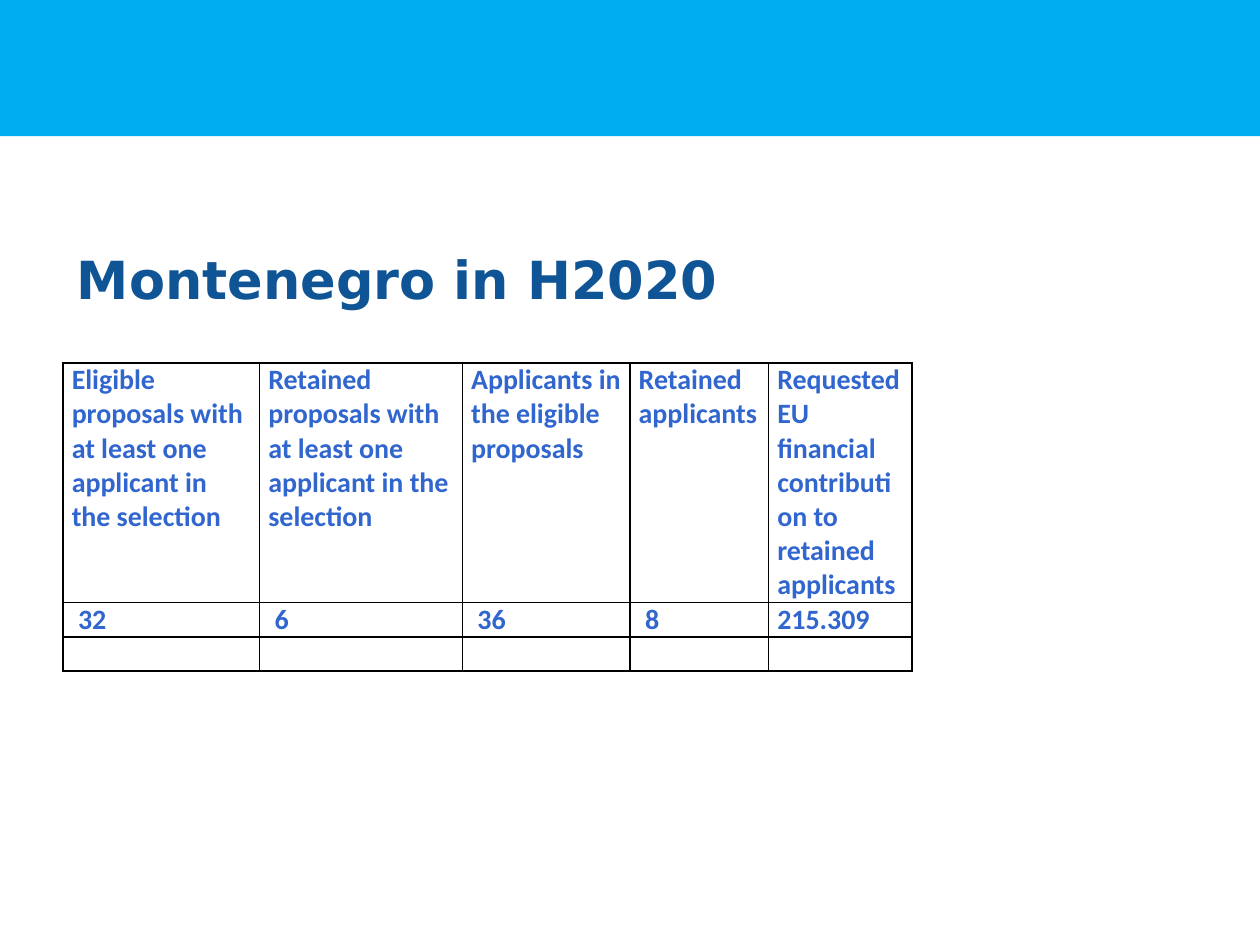
from dataclasses import dataclass

from lxml import etree
from pptx import Presentation
from pptx.dml.color import RGBColor
from pptx.enum.shapes import MSO_SHAPE
from pptx.enum.text import MSO_ANCHOR, PP_ALIGN
from pptx.oxml.ns import qn
from pptx.util import Inches, Pt

RECTANGLE = MSO_SHAPE.RECTANGLE
MIDDLE = MSO_ANCHOR.MIDDLE
LEFT = PP_ALIGN.LEFT
TITLE_ONLY = 5


@dataclass(frozen=True)
class Theme:
    """Colours, fonts and type sizes of the slide."""

    band: RGBColor = RGBColor(0x00, 0xAE, 0xF0)
    heading: RGBColor = RGBColor(0x0F, 0x54, 0x94)
    figures: RGBColor = RGBColor(0x31, 0x66, 0xCF)
    border: str = "000000"
    heading_font: str = "DejaVu Sans"
    table_font: str = "Calibri"
    heading_size: int = 30
    table_size: int = 16
    border_width: int = 1


THEME = Theme()
COLUMN_WIDTHS = [1.56, 1.61, 1.33, 1.1, 1.14]
ROW_HEIGHTS = [1.14, 0.26, 0.26]
PARTICIPATION = [
    [
        "Eligible proposals with at least one applicant in the selection",
        "Retained proposals with at least one applicant in the selection",
        "Applicants in the eligible proposals",
        "Retained applicants",
        "Requested EU financial contribution to retained applicants",
    ],
    [" 32", " 6", " 36", " 8", "215.309"],
    [""] * 5,
]


def add_run(paragraph, text, font_name, size, color):
    """Add one bold run in the given font, size and colour."""
    run = paragraph.add_run()
    run.text = text
    run.font.name = font_name
    run.font.size = Pt(size)
    run.font.bold = True
    run.font.color.rgb = color


def add_band(slide, left, top, width, height):
    """Draw the coloured header band."""
    band = slide.shapes.add_shape(RECTANGLE, left, top, width, height)
    band.shadow.inherit = False
    band.fill.solid()
    band.fill.fore_color.rgb = THEME.band
    band.line.fill.background()


def place_title(slide, left, top, width, height):
    """Place the heading with its hanging indent."""
    title = slide.shapes.title
    title.left, title.top, title.width, title.height = left, top, width, height
    title.text_frame.vertical_anchor = MIDDLE
    heading = title.text_frame.paragraphs[0]
    heading.alignment = LEFT
    indent = Inches(0.39)
    properties = heading._p.get_or_add_pPr()
    properties.set("marL", str(indent))
    properties.set("indent", str(-indent))
    add_run(heading, "Montenegro in H2020", THEME.heading_font,
            THEME.heading_size, THEME.heading)


def set_borders(cell):
    """Rule all four sides of a cell."""
    properties = cell._tc.get_or_add_tcPr()
    for side in ("a:lnL", "a:lnR", "a:lnT", "a:lnB"):
        line = etree.SubElement(properties, qn(side), w=str(Pt(THEME.border_width)))
        fill = etree.SubElement(line, qn("a:solidFill"))
        etree.SubElement(fill, qn("a:srgbClr"), val=THEME.border)


def fill_cell(cell, text):
    """Format one cell and write its text."""
    cell.margin_left = cell.margin_right = Inches(0.07)
    cell.margin_top = cell.margin_bottom = 0
    set_borders(cell)
    cell.fill.background()
    paragraph = cell.text_frame.paragraphs[0]
    if text:
        add_run(paragraph, text, THEME.table_font, THEME.table_size, THEME.figures)
    else:
        end = etree.SubElement(paragraph._p, qn("a:endParaRPr"),
                               sz=str(THEME.table_size * 100))
        etree.SubElement(end, qn("a:latin"), typeface=THEME.table_font)


def add_participation_table(slide, left, top, width, height):
    """Add the table of proposals, applicants and funding."""
    table = slide.shapes.add_table(
        len(ROW_HEIGHTS), len(COLUMN_WIDTHS), left, top, width, height).table
    table.first_row = table.horz_banding = False
    for column, column_width in zip(table.columns, COLUMN_WIDTHS):
        column.width = Inches(column_width)
    for row, row_height, texts in zip(table.rows, ROW_HEIGHTS, PARTICIPATION):
        row.height = Inches(row_height)
        for cell, text in zip(row.cells, texts):
            fill_cell(cell, text)


def main():
    """Build and save the slide."""
    presentation = Presentation()
    presentation.slide_width = Inches(10)
    presentation.slide_height = Inches(7.5)
    slide = presentation.slides.add_slide(presentation.slide_layouts[TITLE_ONLY])
    add_band(slide, 0, 0, presentation.slide_width, Inches(1.08))
    place_title(slide, Inches(0.51), Inches(1.7), Inches(9), Inches(1.02))
    add_participation_table(slide, Inches(0.5), Inches(2.88),
                            Inches(sum(COLUMN_WIDTHS)), Inches(sum(ROW_HEIGHTS)))
    presentation.save("out.pptx")


if __name__ == "__main__":
    main()
